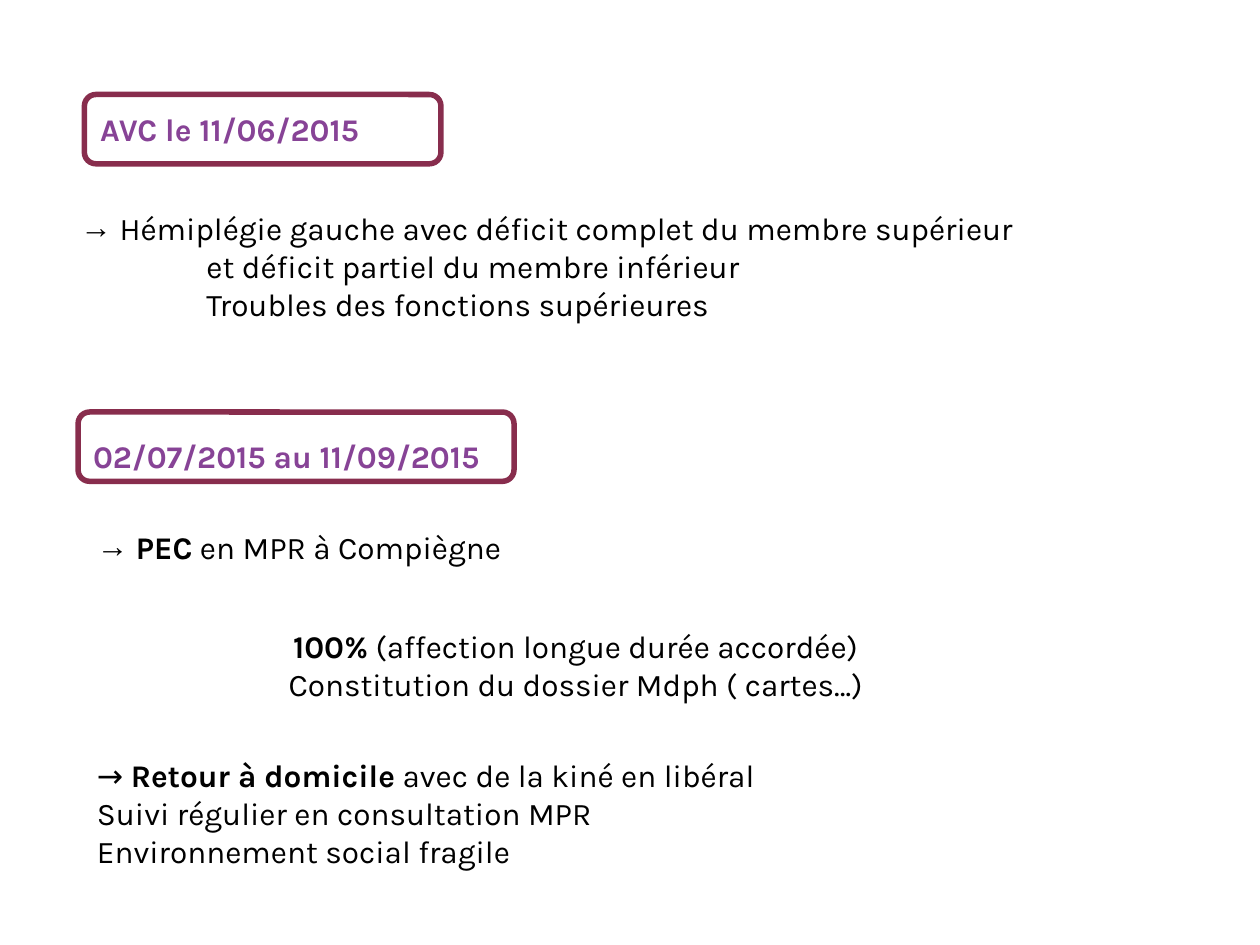
from pptx import Presentation, util as u
from pptx.dml.color import RGBColor
from pptx.enum import shapes, text
from pptx.oxml import parse_xml
from pptx.oxml.ns import nsdecls

COLORS = {"border": "882D4D", "heading": "874396", "body": "000000"}
BODY = {"name": "Karla", "size": u.Pt(18), "bold": False}
STRONG = {**BODY, "bold": True}
CENTER = text.PP_ALIGN.CENTER


def rgb(key):
    return RGBColor.from_string(COLORS[key])


def inches(box):
    return [u.Inches(value) for value in box]


def add_run(paragraph, content, formats, color="body"):
    run = paragraph.add_run()
    run.text = content
    for name, value in formats.items():
        setattr(run.font, name, value)
    run.font.color.rgb = rgb(color)


def set_indent(paragraph, left, first=0.0, bullet=None):
    properties = paragraph._p.get_or_add_pPr()
    properties.set("marL", str(u.Inches(left)))
    properties.set("indent", str(u.Inches(first)))
    if bullet:
        properties.append(parse_xml(f'<a:buFont {nsdecls("a")} typeface="Arial"/>'))
        properties.append(parse_xml(f'<a:buChar {nsdecls("a")} char="{bullet}"/>'))


def add_text(container, box, lines, color="body", align=text.PP_ALIGN.LEFT):
    frame = container.add_textbox(*inches(box)).text_frame
    frame.word_wrap = True
    frame.auto_size = text.MSO_AUTO_SIZE.SHAPE_TO_FIT_TEXT
    for index, runs in enumerate(lines):
        paragraph = frame.paragraphs[0] if index == 0 else frame.add_paragraph()
        paragraph.alignment = align
        for content, formats in runs:
            add_run(paragraph, content, formats, color)
    return frame


def add_border(container, box):
    shape = container.add_shape(shapes.MSO_SHAPE.ROUNDED_RECTANGLE, *inches(box))
    shape.shadow.inherit = False
    shape.fill.background()
    shape.line.color.rgb = rgb("border")
    shape.line.width = u.Pt(3.15)
    return shape


def add_stroke_heading(slide, box):
    frame = add_border(slide.shapes, box).text_frame
    frame.vertical_anchor = text.MSO_ANCHOR.MIDDLE
    paragraph = frame.paragraphs[0]
    paragraph.alignment = text.PP_ALIGN.LEFT
    add_run(paragraph, "AVC le 11/06/2015", STRONG, "heading")


def add_period_heading(slide, box):
    left, top, width, height = box
    group = slide.shapes.add_group_shape()
    add_border(group.shapes, box)
    add_text(group.shapes, (left + 0.02, top + 0.15, width + 0.32, 0.4),
             [[("02/07/2015 au 11/09/2015", STRONG)]], "heading")


def add_symptoms(slide, box):
    lines = ["Hémiplégie gauche avec déficit complet du membre supérieur",
             "et déficit partiel du membre inférieur",
             "Troubles des fonctions supérieures"]
    frame = add_text(slide.shapes, box, [[(line, BODY)] for line in lines])
    first, *others = frame.paragraphs
    set_indent(first, 0.31, -0.31, "→")
    for paragraph in others:
        set_indent(paragraph, 1)


def add_care(slide, box):
    frame = add_text(slide.shapes, box,
                     [[("PEC", STRONG), (" en MPR à Compiègne", BODY)]])
    set_indent(frame.paragraphs[0], 0.31, -0.31, "→")


def add_coverage(slide, box):
    add_text(slide.shapes, box, [
        [("100%", STRONG), (" (affection longue durée accordée)", BODY)],
        [("Constitution du dossier Mdph ( cartes…)", BODY)],
    ], align=CENTER)


def add_return_home(slide, box):
    add_text(slide.shapes, box, [
        [("→ ", BODY), ("Retour à domicile", STRONG),
         (" avec de la kiné en libéral", BODY)],
        [("Suivi régulier en consultation MPR", BODY)],
        [("Environnement social fragile", BODY)],
    ])


def main():
    presentation = Presentation()
    presentation.slide_width = u.Inches(10)
    presentation.slide_height = u.Inches(7.5)
    slide = presentation.slides.add_slide(presentation.slide_layouts[6])
    add_symptoms(slide, (0.54, 1.61, 7.95, 1.01))
    add_stroke_heading(slide, (0.67, 0.75, 2.83, 0.55))
    add_period_heading(slide, (0.62, 3.27, 3.46, 0.55))
    add_care(slide, (0.67, 4.14, 4.96, 0.4))
    add_coverage(slide, (2.09, 4.93, 4.96, 0.71))
    add_return_home(slide, (0.67, 5.95, 5.88, 1.01))
    presentation.save("out.pptx")


if __name__ == "__main__":
    main()
